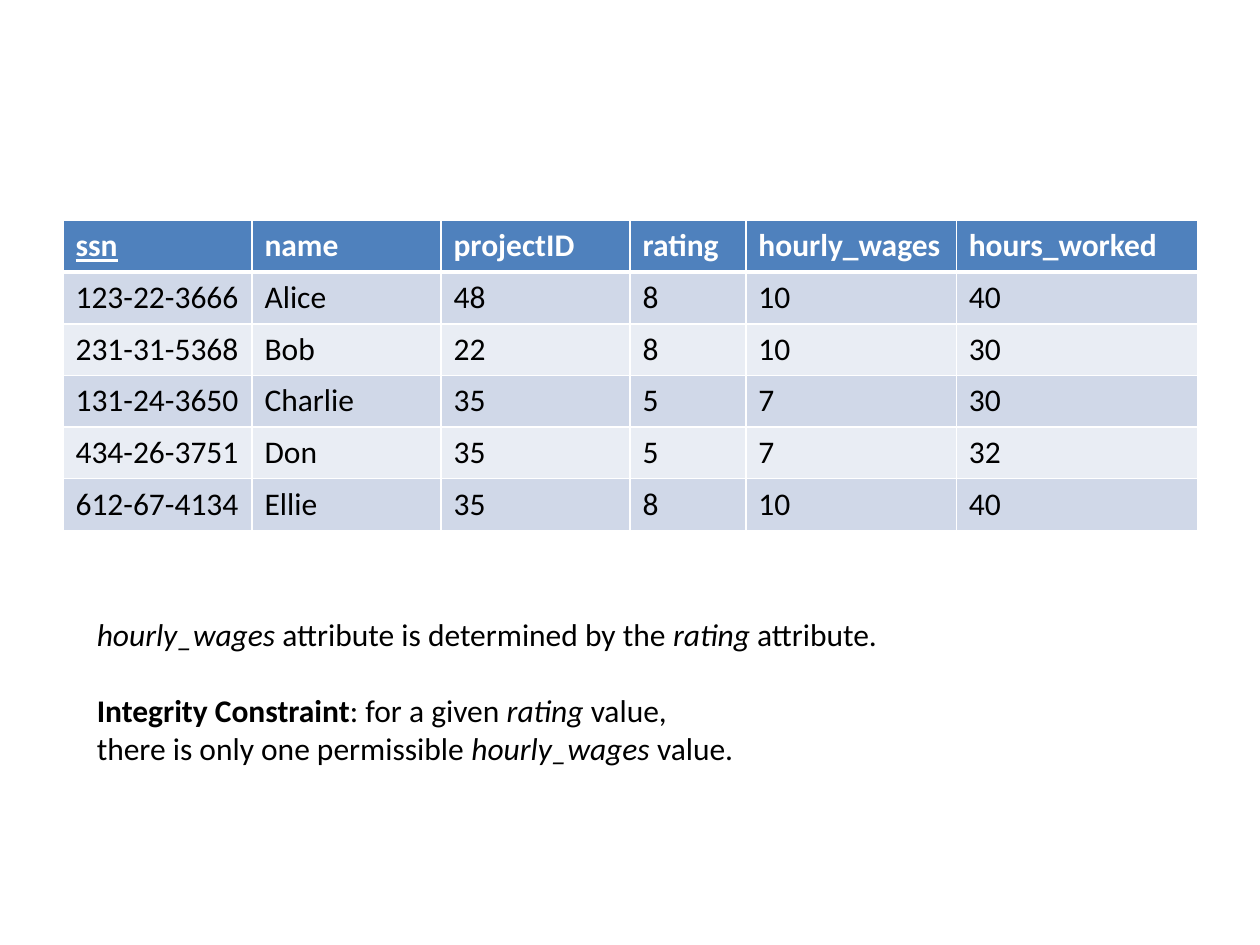
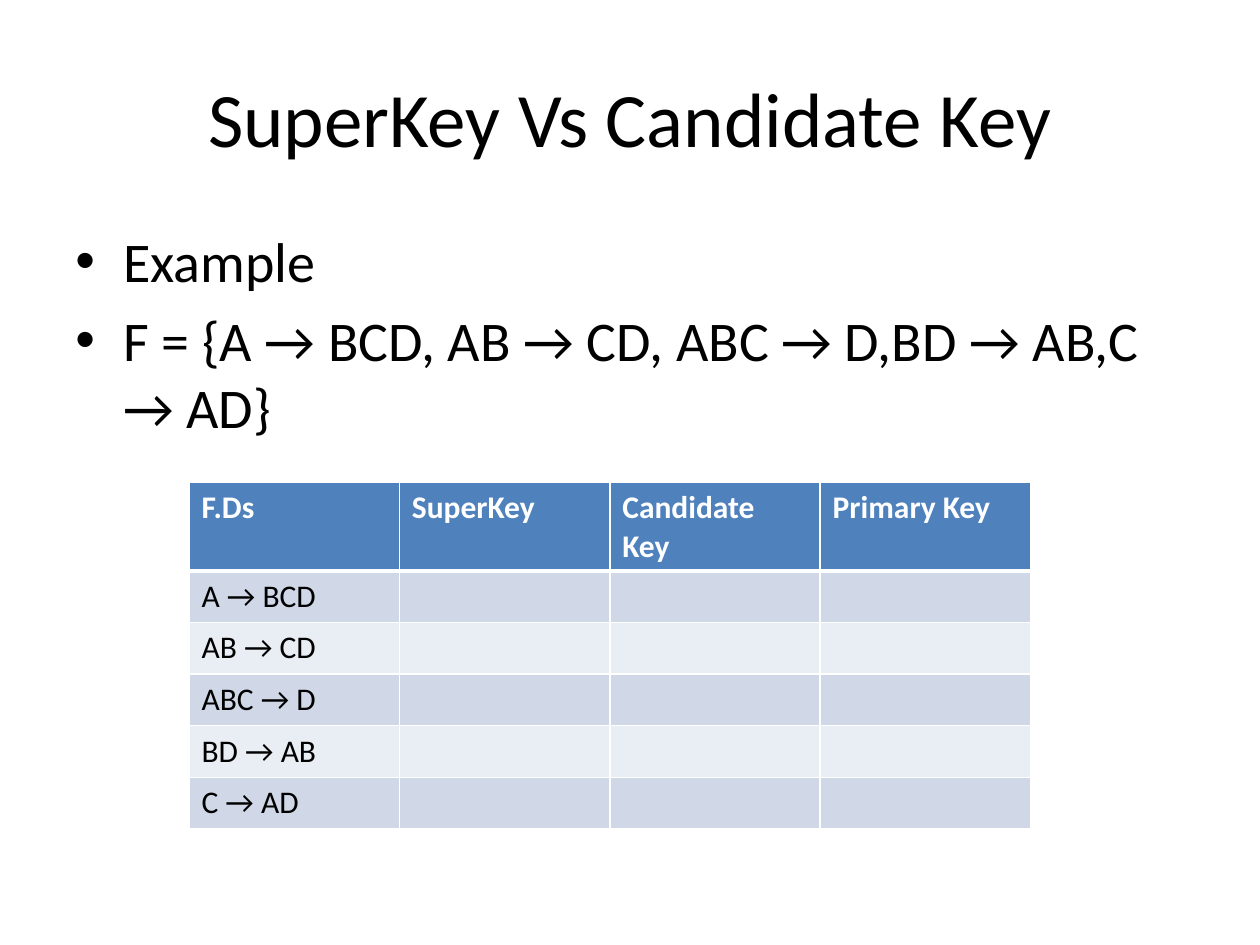
from lxml import etree
from pptx import Presentation
from pptx.dml.color import RGBColor
from pptx.enum import text as t
from pptx.oxml import ns
from pptx.util import Inches, Pt

FONT = "Calibri"
BLACK, WHITE = "000000", "FFFFFF"
HEADER, BANDS = "4F81BD", ("D0D8E8", "E9EDF4")
CONTENT_LEFT, CONTENT_TOP, CONTENT_WIDTH = 0.5, 1.75, 9
ROW_HEIGHT = 0.41

WORKERS = [
    ["ssn", "name", "projectID", "rating", "hourly_wages", "hours_worked"],
    ["123-22-3666", "Alice", "48", "8", "10", "40"],
    ["231-31-5368", "Bob", "22", "8", "10", "30"],
    ["131-24-3650", "Charlie", "35", "5", "7", "30"],
    ["434-26-3751", "Don", "35", "5", "7", "32"],
    ["612-67-4134", "Ellie", "35", "8", "10", "40"],
]
KEY_KINDS = ["F.Ds", "SuperKey", "Candidate Key", "Primary Key"]
DEPENDENCIES = ["A → BCD", "AB → CD", "ABC → D", "BD → AB", "C → AD"]


def color(value):
    """Turn a hex string into a colour."""
    return RGBColor.from_string(value)


def write(paragraph, content, size=18, ink=BLACK, bold=False, italic=False, underline=False):
    """Add one formatted run to a paragraph."""
    run = paragraph.add_run()
    run.text = content
    font = run.font
    font.name, font.size = FONT, Pt(size)
    font.bold, font.italic, font.underline = bold, italic, underline
    font.color.rgb = color(ink)


def add_frame(slide, left, top, width, height, anchor=t.MSO_ANCHOR.TOP):
    """Add a wrapping text box and return its text frame."""
    frame = slide.shapes.add_textbox(*map(Inches, (left, top, width, height))).text_frame
    frame.word_wrap = True
    frame.vertical_anchor = anchor
    return frame


def next_paragraph(frame, index):
    """Return the first paragraph for index 0, otherwise a new one."""
    return frame.add_paragraph() if index else frame.paragraphs[0]


def add_title(slide, title):
    """Place the centred slide title."""
    frame = add_frame(slide, CONTENT_LEFT, 0.3, CONTENT_WIDTH, 1.25, t.MSO_ANCHOR.MIDDLE)
    paragraph = frame.paragraphs[0]
    paragraph.alignment = t.PP_ALIGN.CENTER
    write(paragraph, title, size=44)


def add_bullets(slide, items, left, top, width, height, size=32):
    """Place a bulleted list with hanging indents."""
    frame = add_frame(slide, left, top, width, height)
    for index, item in enumerate(items):
        paragraph = next_paragraph(frame, index)
        paragraph.space_before = Pt(0.2 * size)
        properties = paragraph._p.get_or_add_pPr()
        properties.set("marL", str(Inches(0.38)))
        properties.set("indent", str(Inches(-0.38)))
        etree.SubElement(properties, ns.qn("a:buFont")).set("typeface", "Arial")
        etree.SubElement(properties, ns.qn("a:buChar")).set("char", "•")
        write(paragraph, item, size=size)


def add_borders(cell, **widths):
    """Draw white cell borders of the given widths, ahead of the fill."""
    properties = cell._tc.get_or_add_tcPr()
    for index, (side, width) in enumerate(widths.items()):
        line = etree.Element(ns.qn(f"a:ln{side}"), w=str(Pt(width)))
        fill = etree.SubElement(line, ns.qn("a:solidFill"))
        etree.SubElement(fill, ns.qn("a:srgbClr")).set("val", WHITE)
        properties.insert(index, line)


def add_banded_table(slide, rows, left, top, widths, header_height=ROW_HEIGHT, key=None):
    """Place a table with a blue header, banded rows and an underlined key."""
    height = header_height + ROW_HEIGHT * (len(rows) - 1)
    table = slide.shapes.add_table(
        len(rows), len(widths), *map(Inches, (left, top, sum(widths), height))).table
    table.horz_banding = False
    for column, width in zip(table.columns, widths):
        column.width = Inches(width)
    for r, values in enumerate(rows):
        header = r == 0
        table.rows[r].height = Inches(header_height if header else ROW_HEIGHT)
        for c, value in enumerate(values):
            cell = table.cell(r, c)
            cell.fill.solid()
            cell.fill.fore_color.rgb = color(HEADER if header else BANDS[(r - 1) % 2])
            add_borders(cell, L=1, R=1, T=3 if r == 1 else 1, B=3 if header else 1)
            if value:
                write(cell.text_frame.paragraphs[0], value, bold=header,
                      ink=WHITE if header else BLACK, underline=header and value == key)


def add_constraint(slide, left, top, width, height):
    """Place the explanation of the integrity constraint."""
    italic, bold = {"italic": True}, {"bold": True}
    lines = [
        [("hourly_wages ", italic), ("attribute is determined by the ", {}),
         ("rating ", italic), ("attribute.", {})],
        [("Integrity Constraint", bold), (": for a given ", {}),
         ("rating ", italic), ("value,", {})],
        [("there is only one permissible ", {}), ("hourly_wages ", italic), ("value.", {})],
    ]
    frame = add_frame(slide, left, top, width, height)
    for index, line in enumerate(lines):
        paragraph = next_paragraph(frame, index)
        for content, style in line:
            write(paragraph, content, **style)
    frame.paragraphs[1].space_before = Pt(22)


def build_workers(slide):
    """Build the slide with the worker table and its constraint."""
    add_banded_table(slide, WORKERS, CONTENT_LEFT, CONTENT_TOP,
                     [1.5, 1.5, 1.5, 0.92, 1.67, 1.92], key="ssn")
    add_constraint(slide, 0.67, 4.83, 6.53, 1.92)


def build_keys(slide):
    """Build the slide that compares kinds of keys."""
    add_title(slide, "SuperKey Vs Candidate Key")
    dependency_set = "F = {A → BCD, AB → CD, ABC → D,BD → AB,C → AD}"
    add_bullets(slide, ["Example", dependency_set],
                CONTENT_LEFT, CONTENT_TOP, CONTENT_WIDTH, 4.95)
    rows = [KEY_KINDS] + [[dependency, "", "", ""] for dependency in DEPENDENCIES]
    add_banded_table(slide, rows, 1.5, 3.83, [1.67] * len(KEY_KINDS), header_height=0.7)


def main():
    """Build and save the presentation."""
    deck = Presentation()
    deck.slide_width, deck.slide_height = Inches(10), Inches(7.5)
    for build in (build_workers, build_keys):
        build(deck.slides.add_slide(deck.slide_layouts[6]))
    deck.save("out.pptx")


if __name__ == "__main__":
    main()
